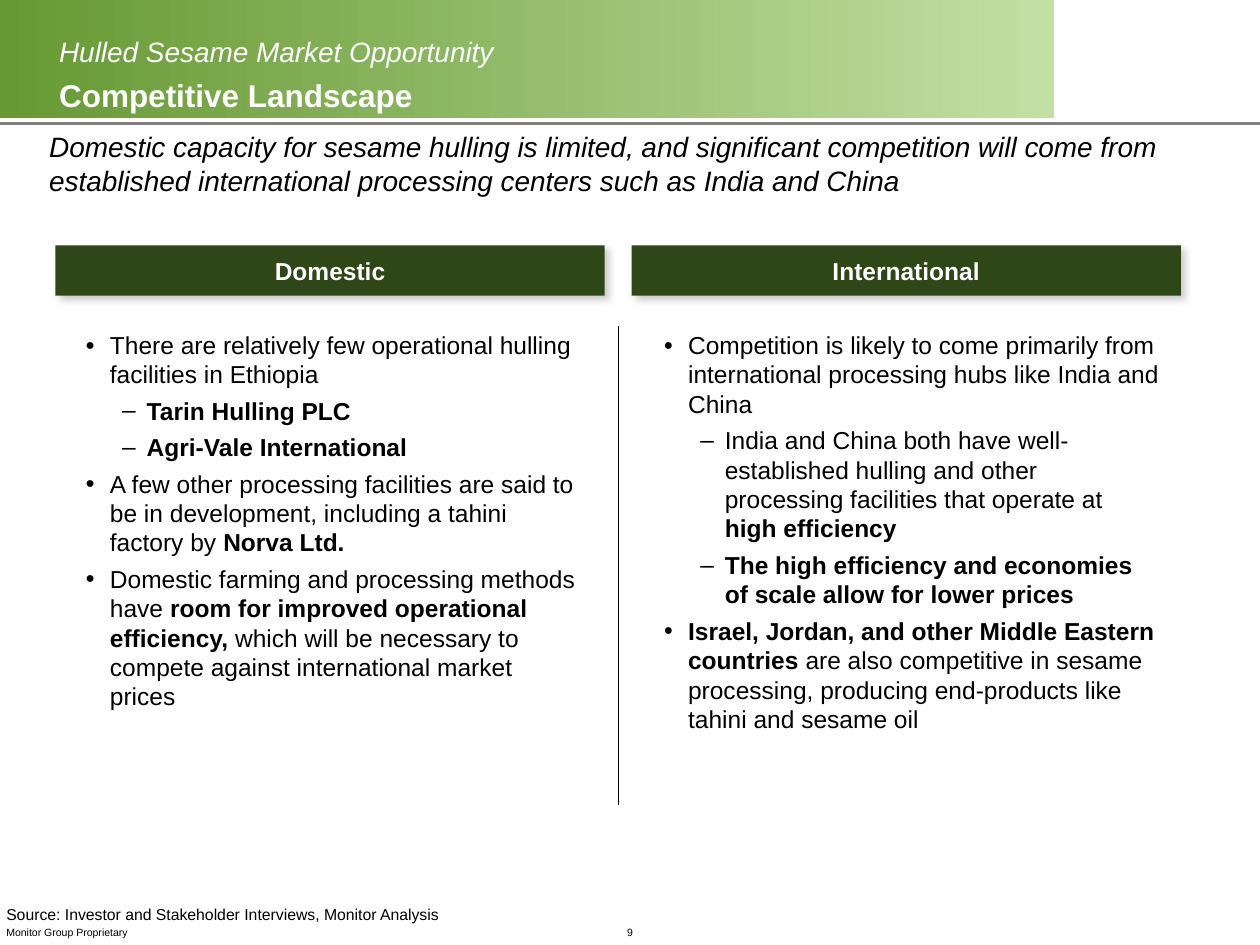
from lxml import etree
from pptx import Presentation
from pptx.dml.color import RGBColor
from pptx.enum.shapes import MSO_CONNECTOR, MSO_SHAPE
from pptx.enum.text import MSO_ANCHOR, MSO_AUTO_SIZE, PP_ALIGN
from pptx.oxml.ns import qn
from pptx.util import Pt

RECTANGLE = MSO_SHAPE.RECTANGLE
STRAIGHT = MSO_CONNECTOR.STRAIGHT
TOP, MIDDLE, BOTTOM = MSO_ANCHOR.TOP, MSO_ANCHOR.MIDDLE, MSO_ANCHOR.BOTTOM
LEFT, CENTER = PP_ALIGN.LEFT, PP_ALIGN.CENTER
FIXED, GROW = MSO_AUTO_SIZE.NONE, MSO_AUTO_SIZE.SHAPE_TO_FIT_TEXT


def color(value):
    return RGBColor.from_string(value)


def format_text(shape, paragraphs, size, font_color="000000", anchor=TOP,
                align=LEFT, auto_size=FIXED, wrap=True, margin=3.6):
    frame = shape.text_frame
    frame.word_wrap = wrap
    frame.auto_size = auto_size
    frame.vertical_anchor = anchor
    frame.margin_left = frame.margin_right = Pt(3.6)
    frame.margin_top = frame.margin_bottom = Pt(margin)
    for index, (level, runs) in enumerate(paragraphs):
        paragraph = frame.paragraphs[0] if index == 0 else frame.add_paragraph()
        paragraph.alignment = align
        paragraph.space_before = Pt(4 if index else 0)
        if level:
            paragraph.level = level - 1
            properties = paragraph._p.get_or_add_pPr()
            properties.set("marL", str(Pt(21 * level)))
            properties.set("indent", str(Pt(-14)))
            if level == 1:
                etree.SubElement(properties, qn("a:buSzPct"), val="65000")
            etree.SubElement(properties, qn("a:buFont"), typeface="Arial")
            etree.SubElement(properties, qn("a:buChar"), char="●" if level == 1 else "–")
        paragraph.font.name = "Arial"
        paragraph.font.size = Pt(size)
        paragraph.font.color.rgb = color(font_color)
        for text, bold in runs:
            run = paragraph.add_run()
            run.text = text
            run.font.bold = bold


presentation = Presentation()
presentation.slide_width, presentation.slide_height = Pt(720), Pt(540)
slide = presentation.slides.add_slide(presentation.slide_layouts[5])
shapes = slide.shapes

band = shapes.add_shape(RECTANGLE, 0, 0, Pt(602.6), Pt(67.7))
band.shadow.inherit = False
band.line.fill.background()
band.fill.gradient()
band.fill.gradient_angle = 0
for stop, stop_color in zip(band.fill.gradient_stops, ("669933", "C2E0A3")):
    stop.color.rgb = color(stop_color)

title = shapes.title
shapes._spTree.append(title._element)
title.left, title.top, title.width, title.height = Pt(30.2), Pt(2.9), Pt(566.6), Pt(61.9)
format_text(title, [(0, [])], 16, "FFFFFF", anchor=BOTTOM, margin=0)
heading = title.text_frame.paragraphs[0]
heading.line_spacing = 1.2
topic = heading.add_run()
topic.text = "Hulled Sesame Market Opportunity"
topic.font.italic = True
heading.add_line_break()
subject = heading.add_run()
subject.text = "Competitive Landscape"
subject.font.size = Pt(18)
subject.font.bold = True

for start_x, start_y, end_x, end_y, line_color, width in (
    (0, 70.6, 720, 70.6, "808080", 2.25),
    (353.5, 186.5, 353.5, 460, "000000", 0.75),
):
    line = shapes.add_connector(STRAIGHT, Pt(start_x), Pt(start_y), Pt(end_x), Pt(end_y))
    line.line.color.rgb = color(line_color)
    line.line.width = Pt(width)
    etree.SubElement(line._element.spPr, qn("a:effectLst"))

message = shapes.add_textbox(Pt(24.5), Pt(70.6), Pt(670.3), Pt(46))
format_text(message, [(0, [(
    "Domestic capacity for sesame hulling is limited, and significant competition will come from "
    "established international processing centers such as India and China", None)])],
    16, auto_size=GROW)
message.text_frame.paragraphs[0].font.italic = True

columns = (
    ("Domestic", 31.7, 38.2, 210, [
        (1, [("There are relatively few operational hulling facilities in Ethiopia", False)]),
        (2, [("Tarin Hulling PLC", True)]),
        (2, [("Agri-Vale International", True)]),
        (1, [("A few other processing facilities are said to be in development, "
              "including a tahini factory by ", False), ("Norva Ltd.", True)]),
        (1, [("Domestic farming and processing methods have ", False),
             ("room for improved operational efficiency,", True),
             (" which will be necessary to compete against international market prices", False)]),
    ]),
    ("International", 360.9, 368.6, 223, [
        (1, [("Competition is likely to come primarily from international processing hubs "
              "like India and China", False)]),
        (2, [("India and China both have well-established hulling and other processing "
              "facilities that operate at ", False), ("high efficiency", True)]),
        (2, [("The high efficiency and economies of scale allow for lower prices", True)]),
        (1, [("Israel, Jordan, and other Middle Eastern countries ", True),
             ("are also competitive in sesame processing, producing end-products like "
              "tahini and sesame oil", False)]),
    ]),
)
for name, header_left, body_left, body_height, points in columns:
    header = shapes.add_shape(RECTANGLE, Pt(header_left), Pt(140.2), Pt(313.9), Pt(28.8))
    header.fill.solid()
    header.fill.fore_color.rgb = color("2F4717")
    header.line.fill.background()
    header.shadow.inherit = False
    effects = header._element.spPr.find(qn("a:effectLst"))
    shadow = etree.SubElement(effects, qn("a:outerShdw"), blurRad=str(Pt(4)),
                              dist=str(Pt(3)), dir="2700000", algn="tl", rotWithShape="0")
    shadow_color = etree.SubElement(shadow, qn("a:srgbClr"), val="808080")
    etree.SubElement(shadow_color, qn("a:alpha"), val="40000")
    format_text(header, [(0, [(name, True)])], 14, "FFFFFF", anchor=MIDDLE, align=CENTER)

    body = shapes.add_textbox(Pt(body_left), Pt(185), Pt(298.8), Pt(body_height))
    format_text(body, points, 14, auto_size=GROW)

source = shapes.add_textbox(0, Pt(499.7), Pt(686.2), Pt(31.7))
format_text(source, [(0, [("Source: Investor and Stakeholder Interviews, Monitor Analysis", None)])],
            9, anchor=BOTTOM)

for text, left, width, align in (
    ("Monitor Group Proprietary", 0, 78.5, LEFT),
    ("9", 352.8, 14.4, CENTER),
):
    footer = shapes.add_textbox(Pt(left), Pt(525.6), Pt(width), Pt(14.4))
    format_text(footer, [(0, [(text, None)])], 6, anchor=BOTTOM, align=align,
                auto_size=GROW, wrap=False)

presentation.save("out.pptx")
